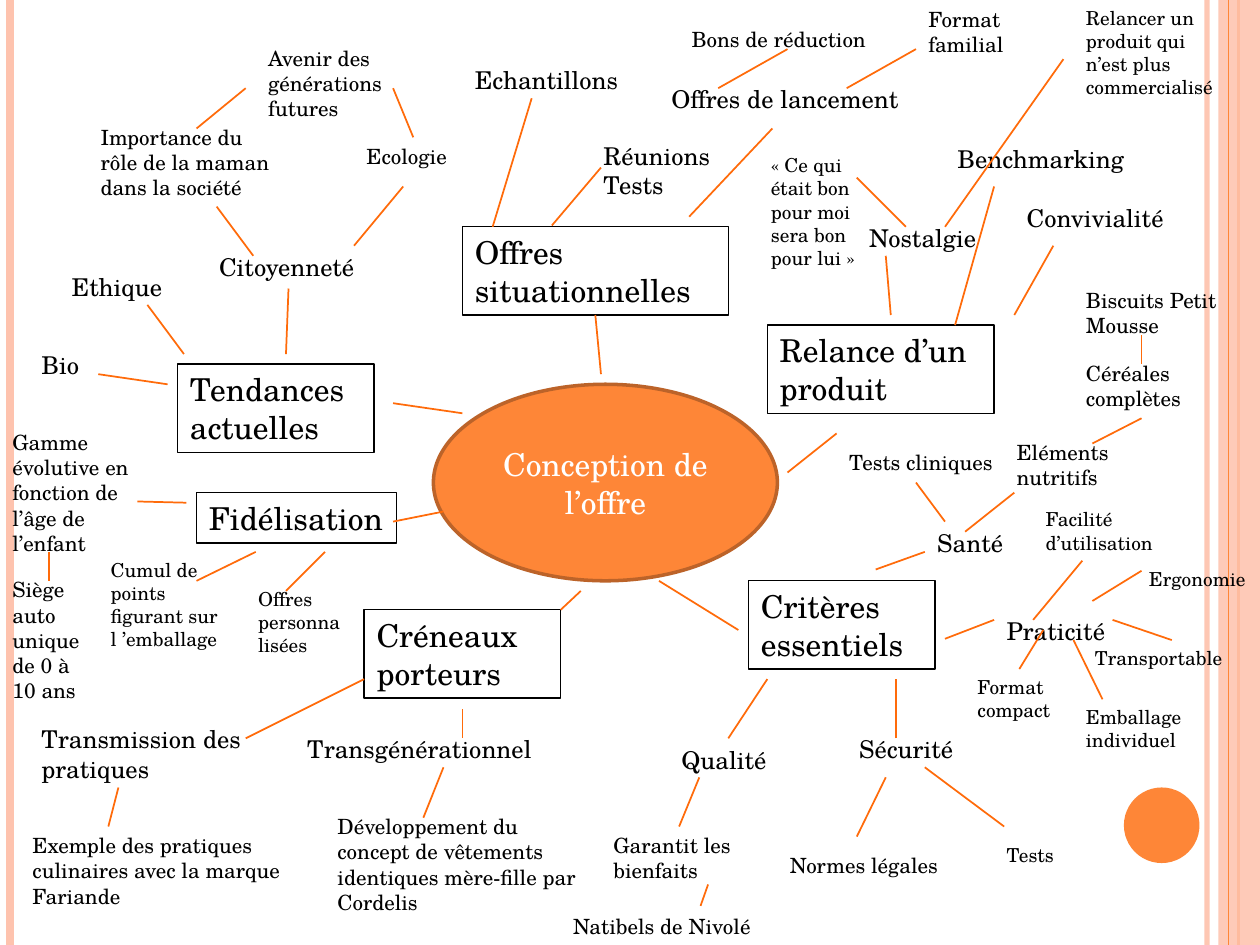
from lxml import etree
from pptx import Presentation
from pptx import util as u
from pptx.dml.color import RGBColor
from pptx.enum import shapes, text
from pptx.oxml import ns

Inches = u.Inches
FONT = "TeX Gyre Schola"
COLORS = {
    "orange": "FE8637", "dark_orange": "BC6329", "branch": "FF6B0A",
    "peach": "FEC3AE", "black": "000000", "white": "FFFFFF",
}


def rgb(name):
    return RGBColor.from_string(COLORS[name])


def draw_line(x1, y1, x2, y2, color, width):
    line = slide.shapes.add_connector(
        shapes.MSO_CONNECTOR.STRAIGHT, Inches(x1), Inches(y1), Inches(x2), Inches(y2))
    line.line.color.rgb = rgb(color)
    line.line.width = u.Pt(width)
    etree.SubElement(line._element.spPr, ns.qn("a:effectLst"))
    return line


prs = Presentation()
prs.slide_width, prs.slide_height = Inches(10), Inches(7.5)
slide = prs.slides.add_slide(prs.slide_layouts[6])

# Side stripes and corner disc
stripes = [draw_line(x, 0, x, 7.5, color, width) for x, color, width in [
    (9.58, "peach", 3), (0.08, "peach", 4.5), (9.83, "orange", 1.5)]]
band = slide.shapes.add_shape(
    shapes.MSO_SHAPE.RECTANGLE, Inches(9.67), 0, Inches(0.33), Inches(7.5))
draw_line(9.75, 0, 9.75, 7.5, "orange", 0.75)
disc = slide.shapes.add_shape(
    shapes.MSO_SHAPE.OVAL, Inches(8.92), Inches(6.25), Inches(0.6), Inches(0.6))
for decor, color in [(band, "peach"), (disc, "orange")]:
    decor.shadow.inherit = False
    decor.fill.solid()
    decor.fill.fore_color.rgb = rgb(color)
    decor.line.fill.background()
for decor, opacity in [(stripes[0], 93), (band, 87)]:
    tint = next(decor._element.spPr.iter(ns.qn("a:srgbClr")))
    etree.SubElement(tint, ns.qn("a:alpha"), val=str(opacity * 1000))

# Central idea
center = slide.shapes.add_shape(
    shapes.MSO_SHAPE.OVAL, Inches(3.44), Inches(3.05), Inches(2.73), Inches(1.56))
center.shadow.inherit = False
center.fill.solid()
center.fill.fore_color.rgb = rgb("orange")
center.line.color.rgb = rgb("dark_orange")
center.line.width = u.Pt(2)
center.text_frame.text = "Conception de l’offre"
center.text_frame.word_wrap = True
center.text_frame.vertical_anchor = text.MSO_ANCHOR.MIDDLE
center_paragraph = center.text_frame.paragraphs[0]
center_paragraph.alignment = text.PP_ALIGN.CENTER
center_font = center_paragraph.runs[0].font
center_font.name, center_font.size = FONT, u.Pt(18)
center_font.color.rgb = rgb("white")

# Ideas by text size: wording, left, top, width, number of lines, wraps
IDEAS = {
    18: [
        ("Tendances actuelles", 1.41, 2.89, 1.56, 2, True),
        ("Créneaux porteurs", 2.89, 4.84, 1.56, 2, True),
        ("Offres situationnelles", 3.67, 1.8, 2.11, 2, True),
        ("Relance d’un produit", 6.09, 2.58, 1.8, 2, True),
        ("Critères essentiels", 5.94, 4.61, 1.48, 2, True),
        ("Fidélisation", 1.56, 3.91, 1.59, 1, False),
    ],
    14: [
        ("Qualité", 5.31, 5.86, 1.33, 1, True),
        ("Sécurité", 6.72, 5.78, 1.02, 1, True),
        ("Praticité", 7.89, 4.84, 1.02, 1, True),
        ("Citoyenneté", 1.64, 1.95, 1.3, 1, False),
        ("Ethique", 0.47, 2.11, 1.33, 1, True),
        ("Bio", 0.23, 2.73, 1.02, 1, True),
        ("Transgénérationnel", 2.34, 5.78, 2.03, 1, True),
        ("Transmission des pratiques", 0.23, 5.7, 1.8, 2, True),
        ("Nostalgie", 6.8, 1.72, 1.09, 1, True),
        ("Convivialité", 8.05, 1.56, 1.33, 1, True),
        ("Benchmarking", 7.5, 1.09, 1.54, 1, False),
        ("Echantillons", 3.67, 0.47, 1.64, 1, True),
        ("Réunions Tests", 4.69, 1.07, 1.25, 2, True),
        ("Offres de lancement", 5.23, 0.62, 2.02, 1, False),
        ("Santé", 7.34, 4.14, 0.73, 1, False),
    ],
    12: [
        ("Exemple des pratiques culinaires avec la marque Fariande", 0.16, 6.56, 2.34, 3, True),
        ("Développement du concept de vêtements identiques mère-fille par Cordelis",
         2.58, 6.41, 2.19, 4, True),
        ("Importance du rôle de la maman dans la société", 0.7, 0.94, 1.64, 3, True),
        ("Ecologie", 2.81, 1.09, 0.85, 1, False),
        ("Avenir des générations futures", 2.03, 0.31, 1.48, 3, True),
        ("Bons de réduction", 5.39, 0.16, 1.6, 1, False),
        ("Format familial", 7.27, 0, 1.09, 2, True),
        ("Normes légales", 6.17, 6.72, 1.39, 1, False),
        ("Garantit les bienfaits", 4.77, 6.56, 1.25, 2, True),
        ("Natibels de Nivolé", 4.45, 7.2, 1.72, 1, False),
        ("Tests cliniques", 6.64, 3.52, 1.41, 1, True),
        ("Eléments nutritifs", 7.97, 3.44, 0.94, 2, True),
        ("Céréales complètes", 8.52, 2.81, 1.09, 2, True),
        ("Biscuits Petit Mousse", 8.52, 2.23, 1.25, 2, True),
        ("Gamme évolutive en fonction de l’âge de l’enfant", 0, 3.36, 1.25, 5, True),
        ("Siège auto unique de 0 à 10 ans", 0, 4.53, 0.78, 5, True),
    ],
    11: [
        ("Cumul de points figurant sur l ’emballage", 0.78, 4.38, 1.09, 4, True),
        ("Format compact", 7.66, 5.31, 0.86, 2, True),
        ("Transportable", 8.59, 5.08, 1.25, 1, True),
        ("Emballage individuel", 8.52, 5.55, 1.02, 2, True),
        ("Tests", 7.89, 6.64, 0.59, 1, False),
        ("Relancer un produit qui n’est plus commercialisé", 8.52, 0, 1.25, 4, True),
        ("Ergonomie", 9.02, 4.45, 0.98, 1, False),
        ("Facilité d’utilisation", 8.2, 3.98, 1.25, 2, True),
        ("« Ce qui était bon pour moi sera bon pour lui »", 6.02, 1.17, 1.02, 5, True),
        ("Offres personnalisées", 1.95, 4.61, 0.86, 3, True),
    ],
}
themes = {}
for size, ideas in IDEAS.items():
    for wording, left, top, width, line_count, wraps in ideas:
        frame = (Inches(left), Inches(top), Inches(width), Inches(0.1 + line_count * size / 60))
        if size == 18:
            idea = slide.shapes.add_shape(shapes.MSO_SHAPE.RECTANGLE, *frame)
            idea.shadow.inherit = False
            idea.fill.background()
            idea.line.color.rgb = rgb("black")
            idea.line.width = u.Pt(0.75)
            themes[wording] = idea
        else:
            idea = slide.shapes.add_textbox(*frame)
        body = idea.text_frame
        body.text = wording
        body.word_wrap = wraps
        body.auto_size = text.MSO_AUTO_SIZE.SHAPE_TO_FIT_TEXT
        body.vertical_anchor = text.MSO_ANCHOR.TOP
        paragraph = body.paragraphs[0]
        paragraph.alignment = text.PP_ALIGN.LEFT
        font = paragraph.runs[0].font
        font.name, font.size = FONT, u.Pt(size)
        font.color.rgb = rgb("black")

# Branches: x1, y1, x2, y2
BRANCHES = [
    # Centre to themes
    (4.61, 4.69, 4.45, 4.84), (5.23, 4.61, 5.86, 5), (3.12, 3.2, 3.67, 3.28),
    (6.25, 3.75, 6.64, 3.44), (3.12, 4.14, 3.52, 4.06),
    # Tendances actuelles
    (2.29, 2.29, 2.27, 2.81), (1.72, 1.64, 2.01, 2.03), (0.78, 2.97, 1.33, 3.05),
    (2.81, 1.95, 3.2, 1.48), (1.56, 1.02, 1.95, 0.7), (1.17, 2.42, 1.46, 2.81),
    (3.12, 0.7, 3.28, 1.09),
    # Relance d’un produit
    (7.03, 2.03, 7.07, 2.5), (8.05, 2.5, 8.36, 1.95), (7.89, 1.48, 7.58, 2.58),
    (8.44, 0.47, 7.5, 1.8), (6.8, 1.41, 7.19, 1.8),
    # Offres situationnelles
    (4.22, 0.78, 3.91, 1.8), (6.13, 1.02, 5.47, 1.72), (4.77, 1.33, 4.38, 1.79),
    (6.25, 0.39, 5.7, 0.7), (7.27, 0.39, 6.72, 0.7),
    # Créneaux porteurs
    (1.95, 5.86, 2.89, 5.39), (3.67, 5.63, 3.67, 5.86), (0.86, 6.56, 0.94, 6.25),
    (3.52, 6.09, 3.36, 6.49),
    # Critères essentiels
    (5.78, 5.86, 6.09, 5.39), (7.11, 5.86, 7.11, 5.39), (7.5, 5.07, 7.89, 4.92),
    (6.8, 6.64, 7.03, 6.17), (5.39, 6.56, 5.55, 6.17), (5.56, 7.19, 5.62, 7.02),
    (6.95, 4.52, 7.34, 4.38), (7.5, 4.14, 7.27, 3.83), (7.66, 4.22, 8.05, 3.91),
    (8.67, 3.52, 9.06, 3.32), (9.06, 2.66, 9.06, 2.89), (8.52, 5.08, 8.75, 5.55),
    (8.83, 4.92, 9.3, 5.08), (8.28, 5, 8.09, 5.31), (7.97, 6.56, 7.34, 6.09),
    (8.67, 4.77, 9.06, 4.53), (8.2, 4.92, 8.59, 4.45),
    # Fidélisation
    (1.09, 3.98, 1.48, 3.99), (1.56, 4.61, 2.03, 4.38), (0.39, 4.61, 0.39, 4.38),
    (2.27, 4.69, 2.58, 4.38),
]
for branch in BRANCHES:
    draw_line(*branch, "branch", 1)
offers_branch = draw_line(4.73, 2.5, 4.77, 2.97, "branch", 1)
offers_branch.begin_connect(themes["Offres situationnelles"], 2)

prs.save("out.pptx")
